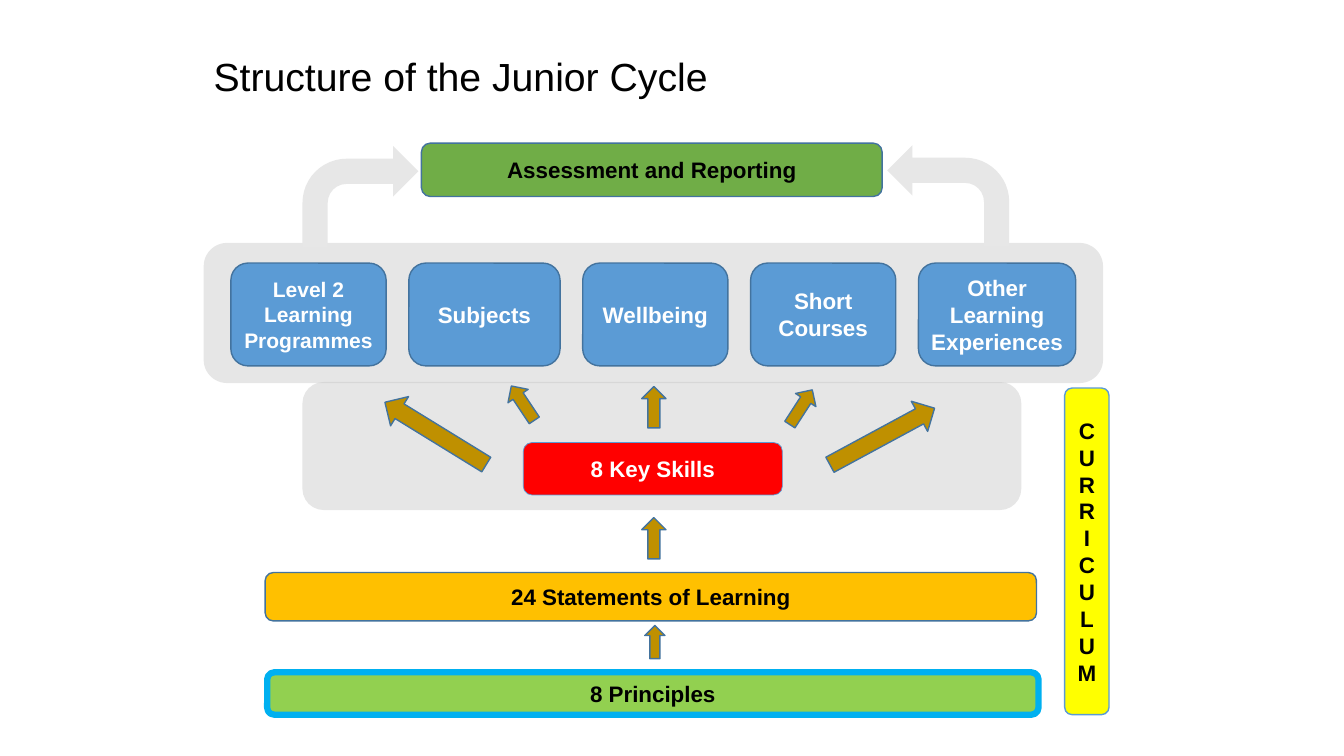
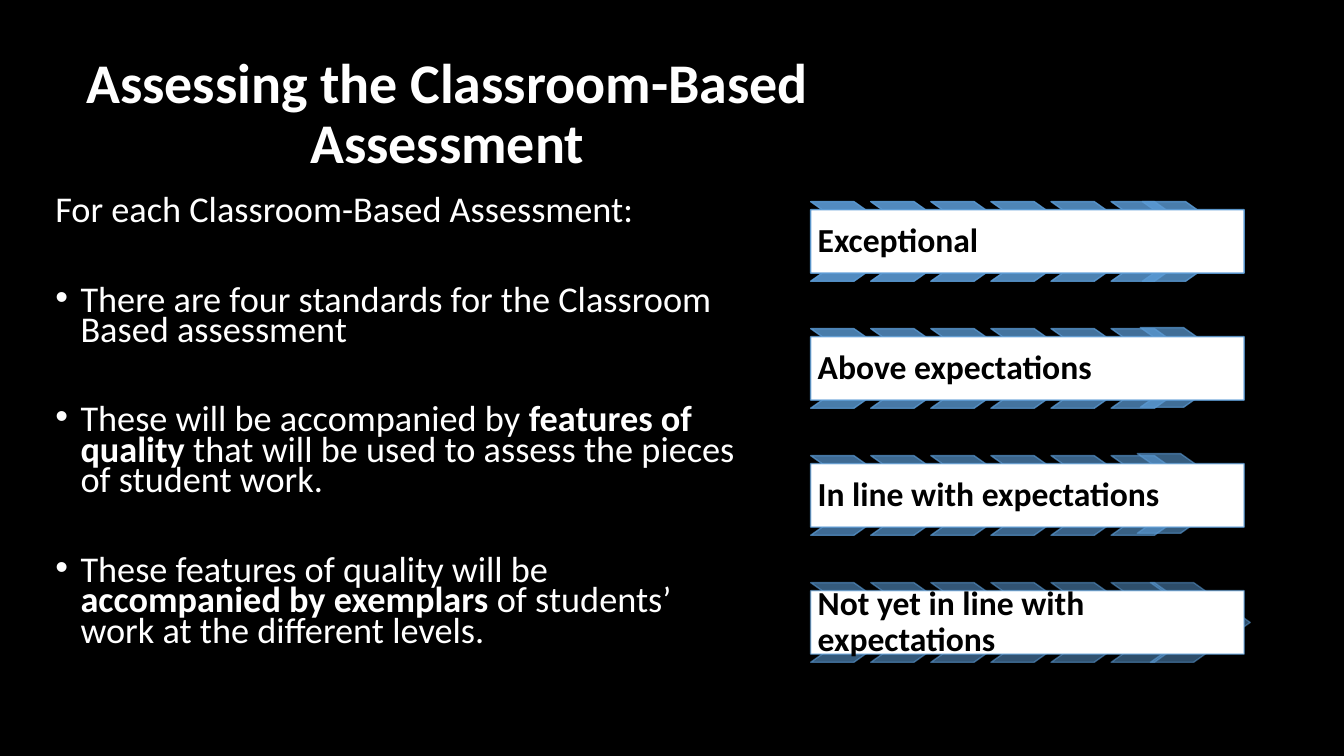
from lxml.etree import SubElement
from pptx import Presentation
from pptx.dml.color import RGBColor
from pptx.enum.shapes import MSO_SHAPE as Shape
from pptx.enum.text import MSO_ANCHOR as Anchor, PP_ALIGN as Align
from pptx.oxml.ns import qn
from pptx.util import Inches, Pt

BLACK = RGBColor(0x00, 0x00, 0x00)
WHITE = RGBColor(0xFF, 0xFF, 0xFF)
BLUE = RGBColor(0x5B, 0x9B, 0xD5)
DARK_BLUE = RGBColor(0x43, 0x73, 0x9E)
SKY = RGBColor(0x00, 0xB0, 0xF0)
SILVER = RGBColor(0xC0, 0xC0, 0xC0)
PALE_GREY = RGBColor(0xE7, 0xE7, 0xE7)
GREEN = RGBColor(0x70, 0xAD, 0x47)
LIME = RGBColor(0x92, 0xD0, 0x50)
AMBER = RGBColor(0xFF, 0xC0, 0x00)
GOLD = RGBColor(0xBF, 0x90, 0x00)
RED = RGBColor(0xFF, 0x00, 0x00)
YELLOW = RGBColor(0xFF, 0xFF, 0x00)

# Font formats
HEADING = {"name": "Arial", "size": Pt(28), "color": BLACK}
LABEL = {"name": "Arial", "size": Pt(16), "bold": True, "color": BLACK}
CARD = {**LABEL, "color": WHITE}
SMALL_CARD = {**CARD, "size": Pt(15)}
DARK_TITLE = {"name": "Calibri", "size": Pt(40), "bold": True, "color": WHITE}
BODY = {"name": "Calibri", "size": Pt(25.9), "color": WHITE}
STANDARD = {"name": "Calibri", "size": Pt(24), "bold": True, "color": BLACK}

SIDES = ("left", "top", "right", "bottom")
STANDARDS = ["Exceptional", "Above expectations", "In line with expectations",
             "Not yet in line with expectations"]


def set_font(font, style):
    for key, value in style.items():
        if key == "color":
            font.color.rgb = value
        else:
            setattr(font, key, value)


def within(box, left, top, width, height):
    """Turn a place inside a box into a place on the slide."""
    return box[0] + left, box[1] + top, width, height


def fade(element, percent):
    for color in element.iter(qn("a:srgbClr")):
        SubElement(color, qn("a:alpha"), val=str(round(percent * 1000)))


def write(shape, paragraphs, style, align=Align.LEFT, anchor=Anchor.TOP,
          inset=None, spacing=None):
    frame = shape.text_frame
    frame.word_wrap = True
    frame.vertical_anchor = anchor
    if inset is not None:
        for side in SIDES:
            setattr(frame, "margin_" + side, Inches(inset))
    for index, text in enumerate(paragraphs):
        para = frame.paragraphs[0] if index == 0 else frame.add_paragraph()
        para.alignment = align
        if spacing:
            para.line_spacing = spacing
        span = para.add_run()
        span.text = text
        set_font(span.font, style)


def add_text(page, box, text, style, **layout):
    shape = page.shapes.add_textbox(*map(Inches, box))
    write(shape, [text], style, **layout)


def draw(shapes, kind, box, fill, line=None, weight=1, turn=0):
    shape = shapes.add_shape(kind, *map(Inches, box))
    shape.shadow.inherit = False
    shape.fill.solid()
    shape.fill.fore_color.rgb = fill
    if line is None:
        shape.line.fill.background()
    else:
        shape.line.color.rgb = line
        shape.line.width = Pt(weight)
    shape.rotation = turn
    return shape


def label_box(page, box, paragraphs, fill, style=LABEL, line=DARK_BLUE,
              weight=1, inset=None):
    shape = draw(page.shapes, Shape.ROUNDED_RECTANGLE, box, fill, line, weight)
    write(shape, paragraphs, style, Align.CENTER, Anchor.MIDDLE, inset)


def grey_panel(page, box):
    panel = draw(page.shapes, Shape.ROUNDED_RECTANGLE, box, SILVER)
    fade(panel._element.spPr, 39)


def gold_arrow(page, box, turn=90):
    draw(page.shapes, Shape.LEFT_ARROW, box, GOLD, DARK_BLUE, turn=turn)


# Regions of the structure slide
def draw_skills(page, box):
    grey_panel(page, box)
    label_box(page, within(box, 2.19, 0.6, 2.57, 0.52), ["8 Key Skills"],
              RED, CARD, BLUE, 0.5)
    long, short = (1.18, 0.34), (0.41, 0.24)
    for left, top, size, turn in [(0.73, 0.34, long, 31.6),
                                  (1.98, 0.09, short, 56.3),
                                  (3.28, 0.13, short, 90),
                                  (4.74, 0.13, short, 122.9),
                                  (5.16, 0.37, long, 151.6)]:
        gold_arrow(page, within(box, left, top, *size), turn)


def draw_strands(page, box):
    grey_panel(page, box)
    cards = [(1.54, ["Level 2 Learning Programmes"], SMALL_CARD, 0),
             (1.5, ["Subjects"], CARD, None),
             (1.44, ["Wellbeing"], CARD, None),
             (1.44, ["Short Courses"], CARD, None),
             (1.56, ["Other Learning", "Experiences"], CARD, 0)]
    margin = 0.27
    free = box[2] - 2 * margin - sum(card[0] for card in cards)
    gap = free / (len(cards) - 1)
    left = margin
    for width, text, style, inset in cards:
        label_box(page, within(box, left, 0.2, width, 1.02), text, BLUE,
                  style, inset=inset)
        left += width + gap


def draw_assessment(page, box):
    label_box(page, within(box, 1.18, 0, 4.57, 0.53),
              ["Assessment and Reporting"], GREEN)
    draw(page.shapes, Shape.BENT_ARROW, within(box, 0, 0.03, 1.15, 1), PALE_GREY)
    mirrored = draw(page.shapes, Shape.BENT_ARROW,
                    within(box, 5.8, 0.02, 1.21, 1), PALE_GREY)
    mirrored._element.spPr.xfrm.set("flipH", "1")


def draw_foundations(page, box):
    gold_arrow(page, within(box, 3.65, 0.02, 0.41, 0.24))
    label_box(page, within(box, 0, 0.48, 7.65, 0.48),
              ["24 Statements of Learning"], AMBER)
    gold_arrow(page, within(box, 3.7, 1.07, 0.33, 0.2))
    label_box(page, within(box, 0.02, 1.47, 7.65, 0.42), ["8 Principles"],
              LIME, line=SKY, weight=4.5)


def build_structure(page):
    add_text(page, (2.02, 0.47, 6.47, 0.57), "Structure of the Junior Cycle", HEADING)
    draw_skills(page, (3, 3.79, 7.13, 1.27))
    draw_strands(page, (2.02, 2.41, 8.92, 1.39))
    draw_assessment(page, (3, 1.42, 7.01, 1.03))
    draw_foundations(page, (2.63, 5.2, 7.67, 1.89))
    label_box(page, (10.56, 3.85, 0.44, 3.24), list("CURRICULUM"), YELLOW, line=BLUE)


# Regions of the assessment slide
def draw_body(page, box):
    points = [
        ["For each Classroom-Based Assessment:"],
        ["There are four standards for the Classroom Based assessment"],
        ["These will be accompanied by ", "features of quality ",
         "that will be used to assess the pieces of student work."],
        ["These features of quality will be ", "accompanied by exemplars ",
         "of students’ work at the different levels."],
    ]
    frame = page.shapes.add_textbox(*map(Inches, box)).text_frame
    frame.word_wrap = True
    for index, parts in enumerate(points):
        para = frame.paragraphs[0] if index == 0 else frame.add_paragraph()
        para.line_spacing = 0.7
        if index:
            para.space_before = Pt(42)
            props = para._p.get_or_add_pPr()
            props.set("marL", str(Inches(0.25)))
            props.set("indent", str(-Inches(0.25)))
            SubElement(props, qn("a:buFont"), typeface="Arial")
            SubElement(props, qn("a:buChar"), char="•")
        for order, text in enumerate(parts):
            span = para.add_run()
            span.text = text
            set_font(span.font, {**BODY, "bold": order == 1})


def draw_standard(page, box, text, tail, opacities):
    """A row of chevrons, the last one set at tail, behind a white label."""
    group = page.shapes.add_group_shape()
    step = 2.98 / 5
    places = [(step * slot, 0) for slot in range(6)] + [tail]
    for (left, top), opacity in zip(places, opacities):
        chevron = draw(group.shapes, Shape.CHEVRON,
                       within(box, left, top, 0.99, 0.79), BLUE, BLUE)
        chevron.adjustments[0] = 0.71
        fade(chevron._element.spPr, opacity)
    label = draw(group.shapes, Shape.RECTANGLE,
                 within(box, 0, 0.08, box[2], 0.63), WHITE, BLUE)
    fade(label._element.spPr.find(qn("a:ln")), opacities[0])
    write(label, [text], STANDARD, anchor=Anchor.MIDDLE, inset=0.07, spacing=0.9)


def draw_standards(page, box):
    tails = [(3.29, 0), (3.27, -0.01), (3.24, -0.02), (3.37, 0)]
    chevrons = 7
    last = len(STANDARDS) * chevrons - 1
    for row, (text, tail) in enumerate(zip(STANDARDS, tails)):
        opacities = [90 - 40 * (row * chevrons + slot) / last
                     for slot in range(chevrons)]
        draw_standard(page, within(box, 0, 1.26 * row, box[2], 0.79), text,
                      tail, opacities)


def build_assessing(page):
    page.background.fill.solid()
    page.background.fill.fore_color.rgb = BLACK
    add_text(page, (0.67, 0.52, 7.53, 1.25),
             "Assessing the Classroom-Based Assessment", DARK_TITLE,
             align=Align.CENTER, anchor=Anchor.MIDDLE, spacing=0.9)
    draw_body(page, (0.45, 1.92, 7.12, 4.95))
    draw_standards(page, (8.04, 2, 4.3, 4.57))


def main():
    deck = Presentation()
    deck.slide_width, deck.slide_height = Inches(13.33), Inches(7.5)
    for build in (build_structure, build_assessing):
        build(deck.slides.add_slide(deck.slide_layouts[6]))
    deck.save("out.pptx")


if __name__ == "__main__":
    main()
